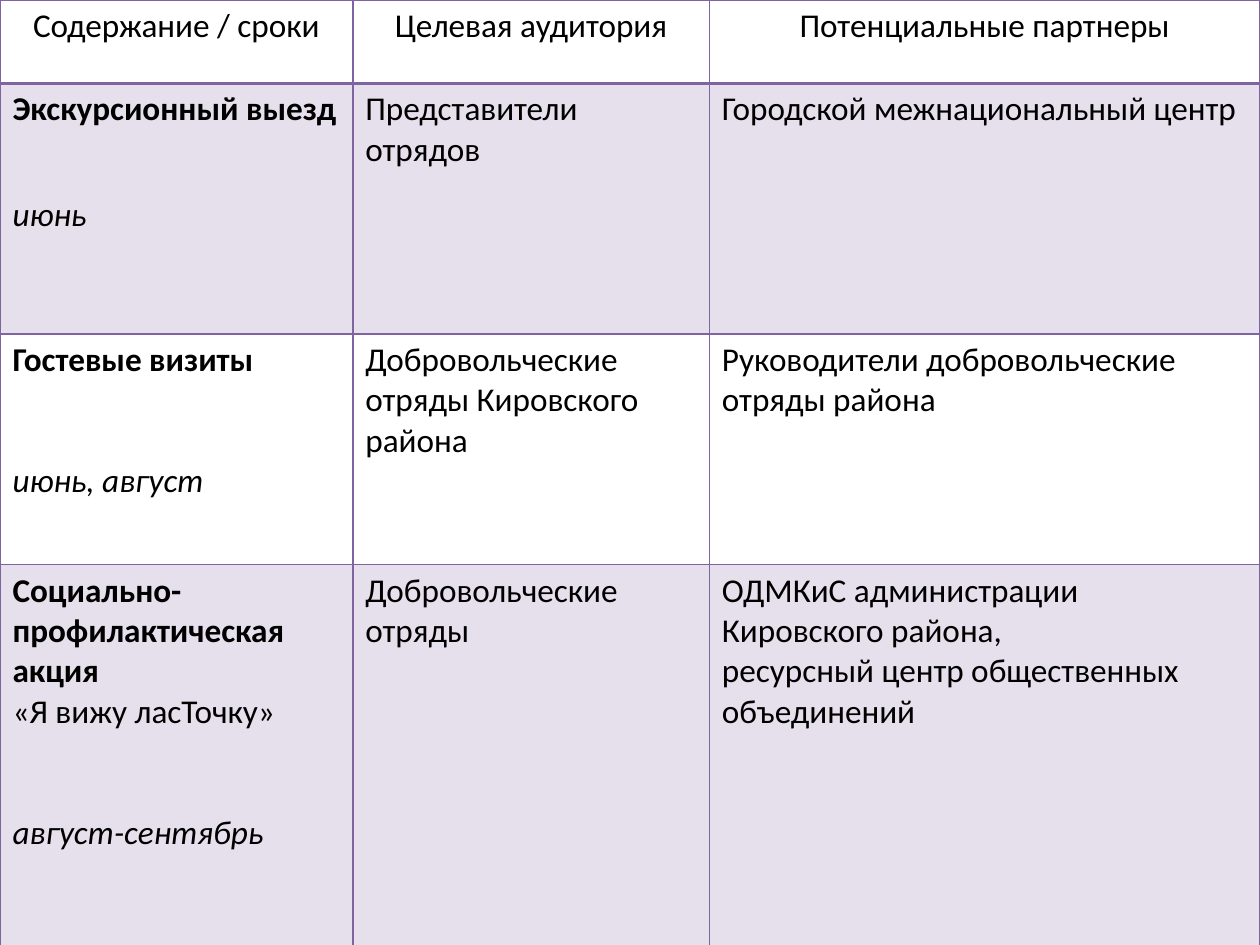
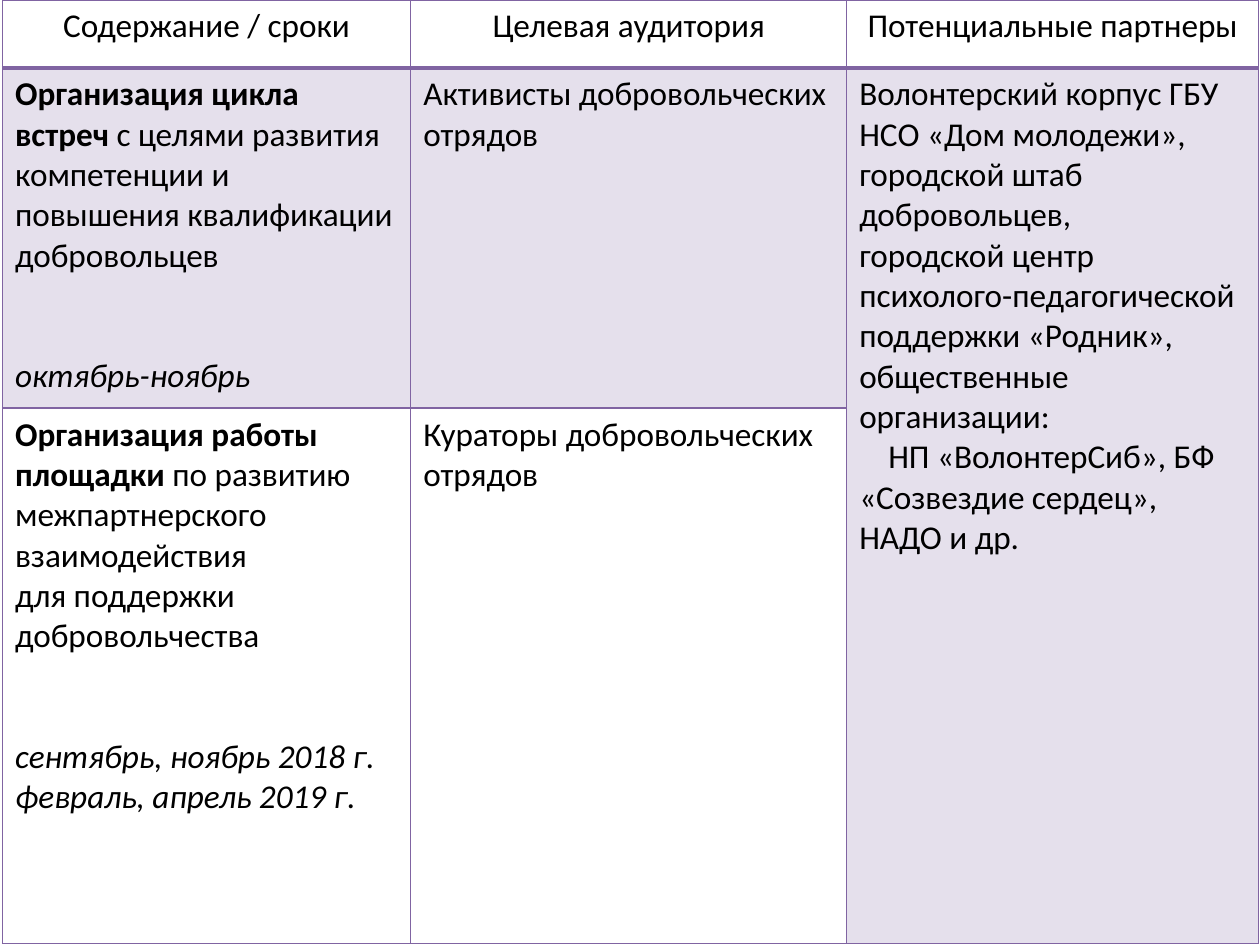
import pptx
import pptx.dml.color
import pptx.enum.text
import pptx.oxml.ns
import pptx.util
from lxml import etree

Inches, Pt = pptx.util.Inches, pptx.util.Pt
PURPLE = pptx.dml.color.RGBColor(0x80, 0x64, 0xA2)
BLACK = pptx.dml.color.RGBColor(0, 0, 0)
FONT = "Calibri"
TEXT_SIZE = Pt(19)
BAND_OPACITY = 20
DATE_GAP = 46
HEADINGS = ["Содержание / сроки", "Целевая аудитория", "Потенциальные партнеры"]

# A cell is a list of paragraphs: (space before in pt, first-line indent in
# inches, runs), and a run is (text, style) with "b" bold and "i" italic.
# A cell given as None continues the cell above it.
plans = [
    {
        "left": 0,
        "columns": [2.8, 2.83, 4.37],
        "rows": [0.66, 1.99, 1.83, 3.03],
        "activities": [
            [
                [(0, 0, [("Экскурсионный выезд", "b")]),
                 (37, 0, [("июнь", "i")])],
                [(0, 0, [("Представители отрядов", "")])],
                [(0, 0, [("Городской межнациональный центр", "")])],
            ],
            [
                [(0, 0, [("Гостевые визиты", "b")]),
                 (DATE_GAP, 0, [("июнь, август", "i")])],
                [(0, 0, [("Добровольческие отряды Кировского района", "")])],
                [(0, 0, [("Руководители добровольческие отряды района", "")])],
            ],
            [
                [(0, 0, [("Социально-профилактическая акция", "b")]),
                 (0, 0, [("«Я вижу ласТочку»", "")]),
                 (DATE_GAP, 0, [("август-сентябрь", "i")])],
                [(0, 0, [("Добровольческие отряды", "")])],
                [(0, 0, [("ОДМКиС администрации Кировского района,", "")]),
                 (0, 0, [("ресурсный центр общественных объединений", "")])],
            ],
        ],
    },
    {
        "left": 0.02,
        "columns": [3.24, 3.46, 3.27],
        "rows": [0.54, 2.7, 4.25],
        "activities": [
            [
                [(0, 0, [("Организация цикла встреч ", "b"),
                         ("с целями развития компетенции и повышения "
                          "квалификации добровольцев", "")]),
                 (DATE_GAP, 0, [("октябрь-ноябрь", "i")])],
                [(0, 0, [("Активисты добровольческих отрядов", "")])],
                [(0, 0, [("Волонтерский корпус ГБУ НСО «Дом молодежи»,", "")]),
                 (0, 0, [("городской штаб добровольцев,", "")]),
                 (0, 0, [("городской центр психолого-педагогической "
                          "поддержки «Родник»,", "")]),
                 (0, 0, [("общественные организации:", "")]),
                 (0, 0.23, [("НП «ВолонтерСиб», БФ «Созвездие сердец», "
                             "НАДО и др.", "")])],
            ],
            [
                [(0, 0, [("Организация работы площадки ", "b"),
                         ("по развитию межпартнерского взаимодействия", "")]),
                 (0, 0, [("для поддержки добровольчества", "")]),
                 (DATE_GAP, 0, [("сентябрь, ноябрь 2018 г.", "i")]),
                 (0, 0, [("февраль, апрель 2019 г.", "i")])],
                [(0, 0, [("Кураторы добровольческих отрядов", "")])],
                None,
            ],
        ],
    },
]


def style_cell(cell, row, banded):
    """Tint banded cells and rule all four sides, thicker under the header."""
    if banded:
        cell.fill.solid()
        cell.fill.fore_color.rgb = PURPLE
    else:
        cell.fill.background()
    properties = cell._tc.get_or_add_tcPr()
    qn = pptx.oxml.ns.qn
    for color in properties.iter(qn("a:srgbClr")):
        etree.SubElement(color, qn("a:alpha"), val=str(BAND_OPACITY * 1000))
    for position, side in enumerate("LRTB"):
        under_header = (row, side) in [(0, "B"), (1, "T")]
        line = etree.Element(qn("a:ln" + side), w=str(Pt(2 if under_header else 1)))
        color = etree.SubElement(line, qn("a:solidFill"))
        etree.SubElement(color, qn("a:srgbClr"), val=str(PURPLE))
        properties.insert(position, line)


def write_cell(cell, paragraphs, alignment):
    for number, (gap, indent, runs) in enumerate(paragraphs):
        frame = cell.text_frame
        paragraph = frame.add_paragraph() if number else frame.paragraphs[0]
        paragraph.alignment = alignment
        if gap:
            paragraph.space_before = Pt(gap)
        if indent:
            paragraph._p.get_or_add_pPr().set("indent", str(Inches(indent)))
        for text, style in runs:
            run = paragraph.add_run()
            run.text = text
            run.font.name = FONT
            run.font.size = TEXT_SIZE
            run.font.color.rgb = BLACK
            run.font.bold = style == "b"
            run.font.italic = style == "i"


deck = pptx.Presentation()
deck.slide_width, deck.slide_height = Inches(10), Inches(7.5)
blank_layout = deck.slide_layouts[6]
header = [[(0, 0, [(heading, "")])] for heading in HEADINGS]

for plan in plans:
    slide = deck.slides.add_slide(blank_layout)
    schedule = slide.shapes.add_table(
        len(plan["rows"]), len(plan["columns"]), Inches(plan["left"]), 0,
        Inches(sum(plan["columns"])), Inches(sum(plan["rows"]))).table
    schedule.first_row = schedule.horz_banding = False
    for column, width in zip(schedule.columns, plan["columns"]):
        column.width = Inches(width)
    for table_row, height in zip(schedule.rows, plan["rows"]):
        table_row.height = Inches(height)

    for row, contents in enumerate([header] + plan["activities"]):
        for column, paragraphs in enumerate(contents):
            cell = schedule.cell(row, column)
            continued = paragraphs is None
            style_cell(cell, row, banded=row % 2 == 1 or continued)
            if continued:
                schedule.cell(row - 1, column).merge(cell)
            else:
                align = pptx.enum.text.PP_ALIGN
                write_cell(cell, paragraphs, align.LEFT if row else align.CENTER)

deck.save("out.pptx")
